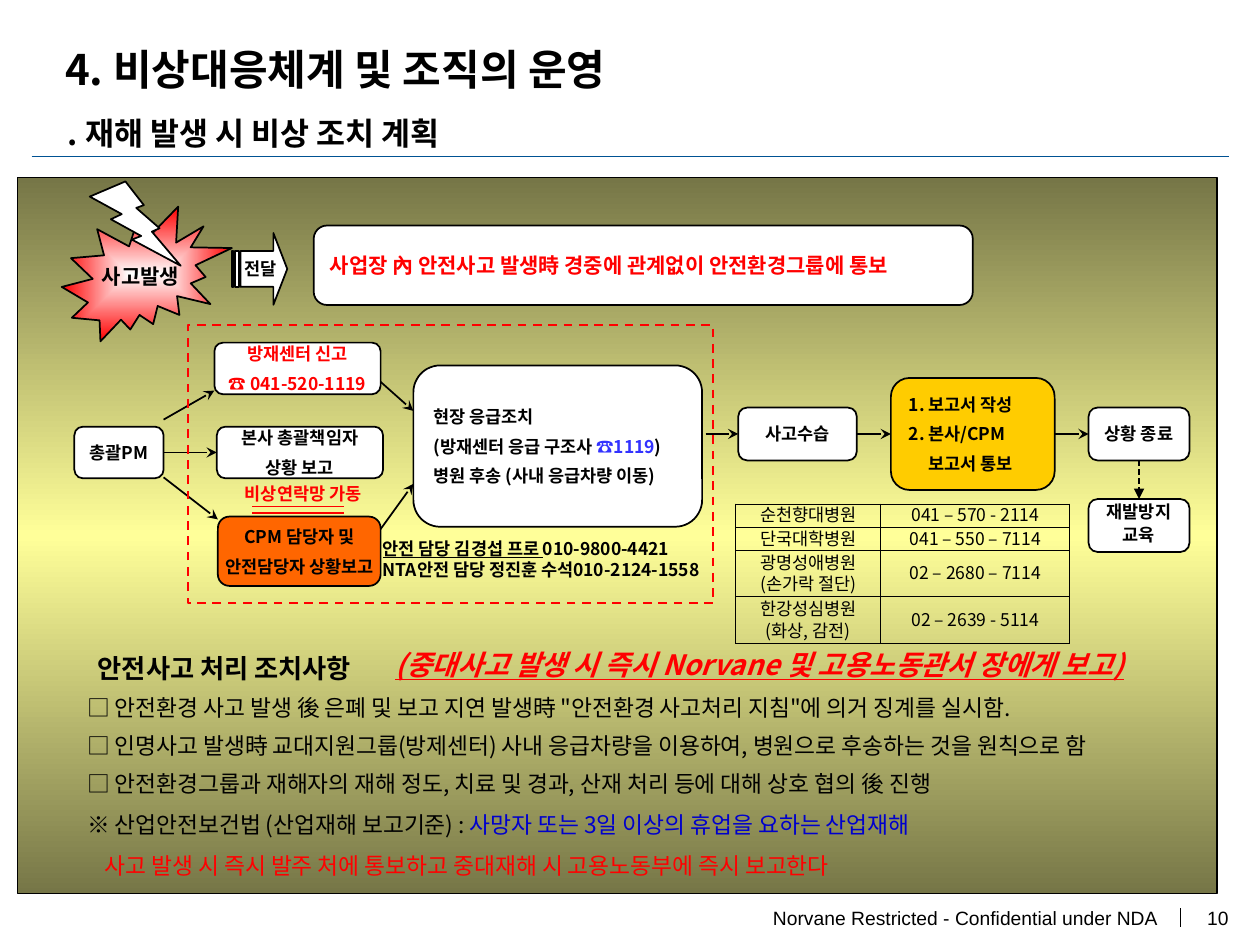
from lxml import etree
from pptx import Presentation
from pptx.dml.color import RGBColor
from pptx.enum.dml import MSO_LINE
from pptx.enum.shapes import MSO_CONNECTOR, MSO_SHAPE
from pptx.enum.text import MSO_ANCHOR, PP_ALIGN
from pptx.oxml.ns import qn
from pptx.util import Pt

KOREAN, LATIN = "Noto Sans CJK KR", "Arial"
BLACK, WHITE, RED = "000000", "FFFFFF", "FF0000"
LEFT, CENTER, RIGHT = PP_ALIGN.LEFT, PP_ALIGN.CENTER, PP_ALIGN.RIGHT
TOP, MIDDLE = MSO_ANCHOR.TOP, MSO_ANCHOR.MIDDLE
ROUNDED = MSO_SHAPE.FLOWCHART_ALTERNATE_PROCESS
RECTANGLE, BURST = MSO_SHAPE.RECTANGLE, MSO_SHAPE.EXPLOSION2
BOLT, STRIPED_ARROW = MSO_SHAPE.LIGHTNING_BOLT, MSO_SHAPE.STRIPED_RIGHT_ARROW
STRAIGHT, DASH = MSO_CONNECTOR.STRAIGHT, MSO_LINE.DASH
SITE_TOP, SITE_LEFT, SITE_BOTTOM, SITE_RIGHT = range(4)


def color(code):
    return RGBColor.from_string(code)


def add_element(parent, tag, **attributes):
    return etree.SubElement(parent, qn(tag), attributes)


def fill_text(frame, lines, size, ink=BLACK, align=LEFT, gap=0, spacing=None,
              font=KOREAN, bold=False, italic=False, underline=False):
    """Each line is a string or a list of (text, colour, underline) spans."""
    for index, line in enumerate(lines):
        para = frame.paragraphs[0] if index == 0 else frame.add_paragraph()
        para.alignment = align
        para.space_before = Pt(gap if index else 0)
        if spacing:
            para.line_spacing = spacing
        spans = [(line, ink, underline)] if isinstance(line, str) else line
        for text, span_ink, underlined in spans:
            span = para.add_run()
            span.text = text
            span.font.name, span.font.size = font, Pt(size)
            span.font.bold, span.font.italic = bold, italic
            span.font.underline = underlined
            span.font.color.rgb = color(span_ink)
            add_element(span.font._element, "a:ea", typeface=font)


def indent(para, amount):
    para._p.get_or_add_pPr().set("marL", str(Pt(amount)))


def add_label(page, box, lines, size, anchor=TOP, **style):
    label = page.shapes.add_textbox(*map(Pt, box))
    frame = label.text_frame
    frame.word_wrap = True
    frame.vertical_anchor = anchor
    fill_text(frame, lines, size, **style)
    return frame


def add_figure(page, kind, box, fill=WHITE, ink=BLACK, width=1):
    figure = page.shapes.add_shape(kind, *map(Pt, box))
    figure.shadow.inherit = False
    if fill:
        figure.fill.solid()
        figure.fill.fore_color.rgb = color(fill)
    else:
        figure.fill.background()
    figure.line.color.rgb = color(ink)
    figure.line.width = Pt(width)
    return figure


def add_node(page, box, lines, size=10, kind=ROUNDED, fill=WHITE, align=CENTER, **style):
    node = add_figure(page, kind, box, fill)
    frame = node.text_frame
    frame.word_wrap = False
    frame.vertical_anchor = MIDDLE
    fill_text(frame, lines, size, align=align, gap=5, bold=True, **style)
    return node


def set_gradient(figure, stops):
    """Replace the fill's stops and return the gradient element."""
    figure.fill.gradient()
    gradient = figure._element.spPr.find(qn("a:gradFill"))
    for child in list(gradient):
        gradient.remove(child)
    stop_list = add_element(gradient, "a:gsLst")
    for percent, code in stops:
        stop = add_element(stop_list, "a:gs", pos=str(percent * 1000))
        add_element(stop, "a:srgbClr", val=code)
    return gradient


def add_line(page, start, end, ink=BLACK, width=1, dash=None, head=None):
    """An end is either a point or a (shape, connection site) pair."""
    joined = [hasattr(place[0], "shape_id") for place in (start, end)]
    points = [(0, 0) if join else place for join, place in zip(joined, (start, end))]
    line = page.shapes.add_connector(STRAIGHT, *(Pt(v) for point in points for v in point))
    if joined[0]:
        line.begin_connect(*start)
    if joined[1]:
        line.end_connect(*end)
    line.line.color.rgb = color(ink)
    line.line.width = Pt(width)
    if dash:
        line.line.dash_style = dash
    if head:
        add_element(line.line._get_or_add_ln(), "a:tailEnd", type=head)
    add_element(line._element.spPr, "a:effectLst")


def add_heading(page, left, top, width):
    add_label(page, (left, top, width, 37), ["4. 비상대응체계 및 조직의 운영"], 24, MIDDLE, bold=True)
    add_label(page, (left + 1.5, top + 36.7, width, 31), [". 재해 발생 시 비상 조치 계획"],
              18, spacing=1.2, bold=True)
    add_line(page, (18, top + 68.4), (702, top + 68.4), "005293", 0.75)


def add_footer(page, right, top, height):
    add_label(page, (right - 320, top, 287, height),
              ["Norvane Restricted - Confidential under NDA"], 11, MIDDLE, align=RIGHT, font=LATIN)
    add_line(page, (right - 27.4, top + 5), (right - 27.4, top + 16))
    number = add_label(page, (right - 36.7, top, 36.7, height), ["10"], 11, MIDDLE,
                       align=RIGHT, font=LATIN)
    number.margin_left = number.margin_right = 0


def add_panel(page, box):
    panel = add_figure(page, RECTANGLE, box, width=0.75)
    gradient = set_gradient(panel, [(0, "767647"), (50, "FFFF99"), (100, "767647")])
    add_element(gradient, "a:lin", ang="5400000", scaled="1")


def add_alarm(page, left, top):
    burst = add_node(page, (left, top + 14.4, 97.2, 77), ["사고발생"], 12, BURST)
    gradient = set_gradient(burst, [(0, WHITE), (100, RED)])
    shade = add_element(gradient, "a:path", path="shape")
    add_element(shade, "a:fillToRect", l="50000", t="50000", r="50000", b="50000")
    add_figure(page, BOLT, (left + 16, top, 52, 48.2))
    arrow = add_node(page, (left + 97.2, top + 29.5, 31.7, 41), ["전달"], 10, STRIPED_ARROW)
    arrow.adjustments[0], arrow.adjustments[1] = 0.5, 0.25
    add_node(page, (left + 144, top + 25.2, 376.6, 45.4),
             ["사업장 內 안전사고 발생時 경중에 관계없이 안전환경그룹에 통보"], 12, align=LEFT, ink=RED)


def add_flow(page, left, top):
    def box(x, y, width, height):
        return left + x, top + y, width, height

    def point(x, y):
        return left + x, top + y

    # Steps
    manager = add_node(page, box(0, 58, 51, 29.5), ["총괄PM"])
    add_node(page, box(82, 109.4, 93, 39.6), ["CPM 담당자 및", "안전담당자 상황보고"], fill="FF6600")
    first_aid = ["현장 응급조치",
                 [("(방재센터 응급 구조사 ", BLACK, False), ("☎1119", "3333FF", False),
                  (")", BLACK, False)],
                 "병원 후송 (사내 응급차량 이동)"]
    add_node(page, box(193.7, 23, 165, 92.2), first_aid, align=LEFT)
    recovery = add_node(page, box(379.4, 47.1, 67.7, 30.2), ["사고수습"])
    report = add_node(page, box(466.6, 30.2, 93.6, 64),
                      ["1. 보고서 작성", "2. 본사/CPM", "보고서 통보"], fill="FFCC00", align=LEFT)
    indent(report.text_frame.paragraphs[2], 11.4)
    closing = add_node(page, box(579.6, 47.1, 57.6, 30.2), ["상황 종료"])
    head_office = add_node(page, box(81.4, 58, 95, 29.5), ["본사 총괄책임자", "상황 보고"])
    training = add_node(page, box(579.6, 99.4, 57.6, 30.2), ["재발방지", "교육"], spacing=0.7)
    add_node(page, box(80, 10, 95, 29.5), ["방재센터 신고", "☎ 041-520-1119"], ink=RED)

    # Arrows
    for start, end in [
        (point(51, 87), point(82, 111)),
        (point(51, 54), point(80, 37.4)),
        ((manager, SITE_RIGHT), (head_office, SITE_LEFT)),
        (point(175, 116.6), point(193.7, 90.7)),
        (point(175, 32.4), point(193.7, 49)),
        (point(360.7, 62.2), (recovery, SITE_LEFT)),
        ((recovery, SITE_RIGHT), (report, SITE_LEFT)),
        ((report, SITE_RIGHT), (closing, SITE_LEFT)),
    ]:
        add_line(page, start, end, head="stealth")
    add_line(page, (closing, SITE_BOTTOM), (training, SITE_TOP), width=0.75,
             dash=DASH, head="triangle")

    # Emergency network frame, caption and contacts
    frame = add_figure(page, RECTANGLE, box(64.8, 0, 300.2, 159), None, RED, 1.25)
    frame.line.dash_style = DASH
    add_label(page, box(77.8, 86.4, 105.8, 19.4), ["비상연락망 가동"], 10, align=CENTER,
              ink=RED, bold=True)
    for y in (103.7, 107.3):
        add_line(page, point(101.5, y), point(154, y), RED)
    add_label(page, box(169.2, 118, 206, 36),
              [[("안전 담당 김경섭 프로 ", BLACK, True), ("010-9800-4421", BLACK, False)],
               "NTA안전 담당 정진훈 수석010-2124-1558"], 10, bold=True)


def add_hospitals(page, left, top):
    rows = [(["순천향대병원"], "041 – 570 - 2114", 13.2),
            (["단국대학병원"], "041 – 550 – 7114", 13.2),
            (["광명성애병원", "(손가락 절단)"], "02 – 2680 – 7114", 26.6),
            (["한강성심병원", "(화상, 감전)"], "02 – 2639 - 5114", 26.6)]
    widths = (82.8, 108)
    height = sum(row[2] for row in rows)
    table = page.shapes.add_table(len(rows), 2, Pt(left), Pt(top), Pt(sum(widths)), Pt(height)).table
    table.first_row = table.horz_banding = False
    for column, width in zip(table.columns, widths):
        column.width = Pt(width)
    for index, (names, phone, row_height) in enumerate(rows):
        table.rows[index].height = Pt(row_height)
        for cell, lines in zip(table.rows[index].cells, (names, [phone])):
            cell.margin_left = cell.margin_right = cell.margin_top = cell.margin_bottom = 0
            cell.vertical_anchor = MIDDLE
            fill_text(cell.text_frame, lines, 10, align=CENTER, spacing=0.85)
            for side in ("a:lnL", "a:lnR", "a:lnT", "a:lnB"):
                border = add_element(cell._tc.get_or_add_tcPr(), side, w=str(Pt(0.5)))
                add_element(add_element(border, "a:solidFill"), "a:srgbClr", val=BLACK)
            cell.fill.background()


def add_measures(page, left, top, width):
    add_label(page, (left + 10.6, top + 2.9, 200, 25), ["안전사고 처리 조치사항"], 15, bold=True)
    add_label(page, (left + 180.7, top, 489, 26.6),
              ["(중대사고 발생 시 즉시 Norvane 및 고용노동관서 장에게 보고)"], 16,
              ink=RED, bold=True, italic=True, underline=True)
    rules = ["□ 안전환경 사고 발생 後 은폐 및 보고 지연 발생時 \"안전환경 사고처리 지침\"에 의거 징계를 실시함.",
             "□ 인명사고 발생時 교대지원그룹(방제센터) 사내 응급차량을 이용하여, 병원으로 후송하는 것을 원칙으로 함",
             "□ 안전환경그룹과 재해자의 재해 정도, 치료 및 경과, 산재 처리 등에 대해 상호 협의 後 진행",
             [("※ 산업안전보건법 (산업재해 보고기준) : ", BLACK, False),
              ("사망자 또는 3일 이상의 휴업을 요하는 산업재해", "0000CC", False)],
             [("사고 발생 시 즉시 발주 처에 통보하고 중대재해 시 고용노동부에 즉시 보고한다", RED, False)]]
    paras = add_label(page, (left, top + 26.6, width, 114), rules, 13, gap=6).paragraphs
    for para in paras:
        indent(para, 4.5)
    for para in paras[3:]:
        para.space_before = Pt(0)
        para.line_spacing = 1.5
    indent(paras[4], 14.5)


def main():
    deck = Presentation()
    deck.slide_width, deck.slide_height = Pt(720), Pt(540)
    page = deck.slides.add_slide(deck.slide_layouts[6])
    add_heading(page, 30.2, 20.9, 476)
    add_footer(page, 702, 514, 21)
    add_panel(page, (10, 101.5, 685.5, 409))
    add_alarm(page, 35.3, 103.7)
    add_flow(page, 42.5, 185.8)
    add_hospitals(page, 420.5, 288)
    add_measures(page, 38.2, 366.5, 673)
    deck.save("out.pptx")


if __name__ == "__main__":
    main()
